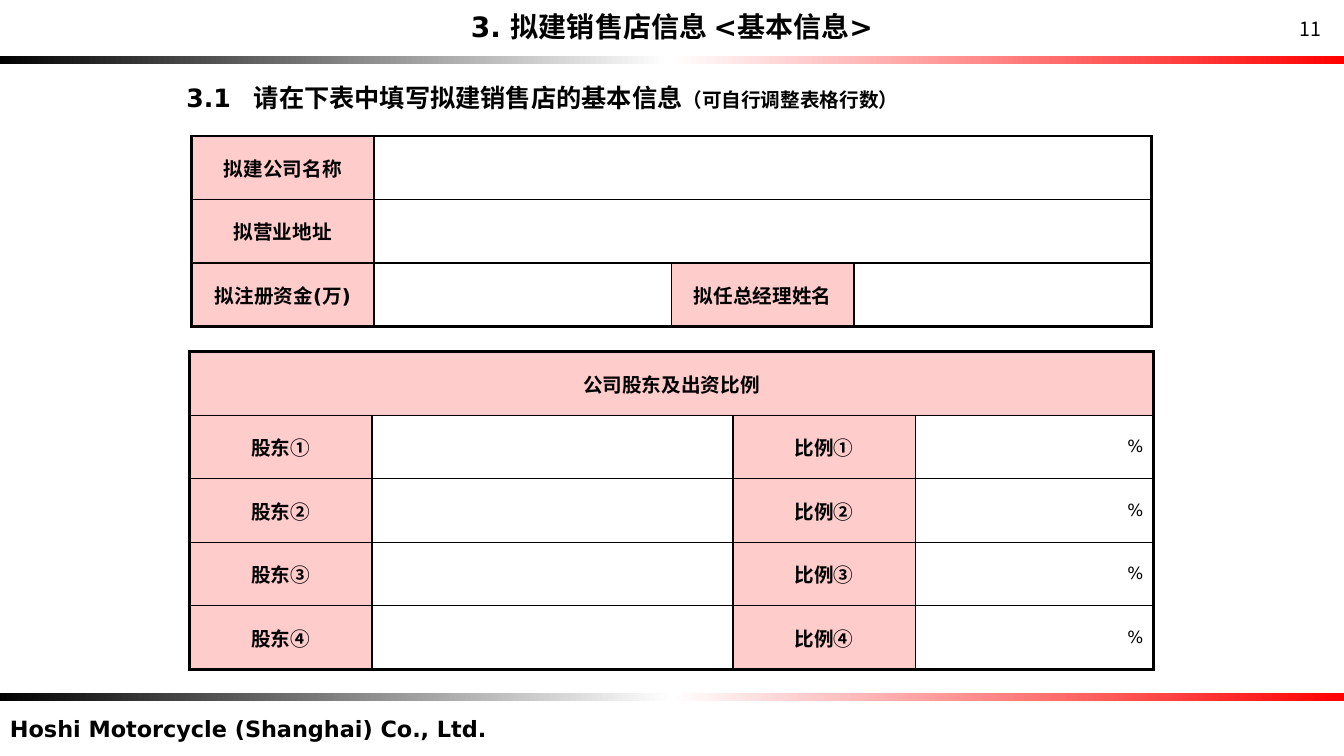
from dataclasses import dataclass
from typing import NamedTuple

from lxml import etree
from pptx import Presentation
from pptx.dml.color import RGBColor
from pptx.enum.shapes import MSO_SHAPE
from pptx.enum.text import MSO_ANCHOR, PP_ALIGN
from pptx.oxml.ns import qn
from pptx.util import Emu, Pt

LEFT, MID, RIGHT = PP_ALIGN.LEFT, PP_ALIGN.CENTER, PP_ALIGN.RIGHT
TOP, CORE = MSO_ANCHOR.TOP, MSO_ANCHOR.MIDDLE
RECT = MSO_SHAPE.RECTANGLE
COLS, ROWS = 1333, 750
STEP = 9144


@dataclass(frozen=True)
class Theme:
    ink: str = "000000"
    paper: str = "FFFFFF"
    rose: str = "FFCCCC"
    red: str = "FF0000"
    latin: str = "DejaVu Sans"
    asian: str = "Noto Sans CJK JP"
    title: int = 20
    head: int = 18
    foot: int = 16
    body: int = 14
    small: int = 12
    thin: float = 1
    thick: float = 2.25


THEME = Theme()


class Box(NamedTuple):
    col: int
    row: int
    wide: int
    high: int


class Run(NamedTuple):
    text: str
    size: int = THEME.body
    bold: bool = True
    font: str = THEME.latin


class Label(NamedTuple):
    box: Box
    runs: list[Run]
    align: PP_ALIGN = LEFT
    anchor: MSO_ANCHOR = TOP
    tab: int = 0


class Cell(NamedTuple):
    run: Run | None = None
    fill: str = THEME.paper
    align: PP_ALIGN = MID
    span: int = 1


class Grid(NamedTuple):
    col: int
    row: int
    cols: list[int]
    high: int
    cells: list[list[Cell]]


def grid(count: int) -> Emu:
    return Emu(count * STEP)


def place(box: Box) -> list[Emu]:
    return [grid(part) for part in box]


def write(frame, runs: list[Run], align: PP_ALIGN, tab: int = 0) -> None:
    para = frame.paragraphs[0]
    para.alignment = align
    if tab:
        stops = etree.SubElement(para._p.get_or_add_pPr(), qn("a:tabLst"))
        etree.SubElement(stops, qn("a:tab"), pos=str(grid(tab)), algn="l")
    for item in runs:
        run = para.add_run()
        run.text = item.text
        font = run.font
        font.size, font.bold, font.name = Pt(item.size), item.bold, item.font
        font.color.rgb = RGBColor.from_string(THEME.ink)
        asian = etree.Element(qn("a:ea"), typeface=THEME.asian)
        run._r.rPr.find(qn("a:latin")).addnext(asian)


def draw_label(shape, label: Label) -> None:
    shape.left, shape.top, shape.width, shape.height = place(label.box)
    frame = shape.text_frame
    frame.word_wrap = True
    frame.vertical_anchor = label.anchor
    write(frame, label.runs, label.align, label.tab)


def draw_bar(shapes, box: Box) -> None:
    bar = shapes.add_shape(RECT, *place(box))
    bar.shadow.inherit = False
    bar.line.fill.background()
    bar.fill.gradient()
    bar.fill.gradient_angle = 0
    stops = bar._element.spPr.find(f".//{qn('a:gsLst')}")
    stops.clear()
    for share, tint in ((0, THEME.ink), (50, THEME.paper), (100, THEME.red)):
        stop = etree.SubElement(stops, qn("a:gs"), pos=str(share * 1000))
        etree.SubElement(stop, qn("a:srgbClr"), val=tint)


def draw_edge(cell, side: str, outer: bool) -> None:
    width = Pt(THEME.thick if outer else THEME.thin)
    line = etree.SubElement(cell._tc.get_or_add_tcPr(), qn(f"a:ln{side}"), w=str(width))
    fill = etree.SubElement(line, qn("a:solidFill"))
    etree.SubElement(fill, qn("a:srgbClr"), val=THEME.ink)


def draw_cell(cell, item: Cell, edges: dict[str, bool]) -> None:
    for side, outer in edges.items():
        draw_edge(cell, side, outer)
    cell.fill.solid()
    cell.fill.fore_color.rgb = RGBColor.from_string(item.fill)
    cell.vertical_anchor = CORE
    if item.run and not cell.is_spanned:
        write(cell.text_frame, [item.run], item.align)


def draw_grid(shapes, plan: Grid) -> None:
    count, width = len(plan.cells), len(plan.cols)
    box = Box(plan.col, plan.row, sum(plan.cols), plan.high * count)
    table = shapes.add_table(count, width, *place(box)).table
    table.first_row = table.horz_banding = False
    for col, wide in zip(table.columns, plan.cols):
        col.width = grid(wide)
    for y, line in enumerate(plan.cells):
        table.rows[y].height = grid(plan.high)
        x = 0
        for item in line:
            end = x + item.span
            if item.span > 1:
                table.cell(y, x).merge(table.cell(y, end - 1))
            edges = {"L": x == 0, "R": end == width, "T": y == 0, "B": y == count - 1}
            for spot in range(x, end):
                draw_cell(table.cell(y, spot), item, edges)
            x = end


def name(text: str, span: int = 1) -> Cell:
    return Cell(Run(text), THEME.rose, MID, span)


HIGH = 63
BLANK = Cell()
SHARE = Cell(Run("%", THEME.small, False), align=RIGHT)
BARS = [Box(-5, 56, 1339, 8), Box(-4, 687, 1339, 8)]
TITLE = Label(Box(381, 10, 571, 33),
              [Run("3. 拟建销售店信息 <基本信息>", THEME.title)], MID, CORE)
LABELS = [
    Label(Box(0, 705, 739, 37),
          [Run("Hoshi Motorcycle (Shanghai) Co., Ltd.", THEME.foot)]),
    Label(Box(1267, 12, 66, 34), [Run("11", bold=False, font=THEME.asian)], MID),
    Label(Box(175, 77, 745, 40),
          [Run("3.1\t请在下表中填写拟建销售店的基本信息", THEME.head),
           Run("（可自行调整表格行数）")], LEFT, CORE, 67),
]
GRIDS = [
    Grid(190, 135, [181, 295, 181, 295], HIGH, [
        [name("拟建公司名称"), Cell(span=3)],
        [name("拟营业地址"), Cell(span=3)],
        [name("拟注册资金(万)"), BLANK, name("拟任总经理姓名"), BLANK],
    ]),
    Grid(188, 349, [181, 358, 181, 236], HIGH, [
        [name("公司股东及出资比例", 4)],
        *[[name(f"股东{mark}"), BLANK, name(f"比例{mark}"), SHARE] for mark in "①②③④"],
    ]),
]


def main() -> None:
    deck = Presentation()
    deck.slide_width, deck.slide_height = grid(COLS), grid(ROWS)
    slide = deck.slides.add_slide(deck.slide_layouts[5])
    shapes = slide.shapes
    for bar in BARS:
        draw_bar(shapes, bar)
    draw_label(shapes.title, TITLE)
    for label in LABELS:
        draw_label(shapes.add_textbox(*place(label.box)), label)
    for plan in GRIDS:
        draw_grid(shapes, plan)
    deck.save("out.pptx")


if __name__ == "__main__":
    main()
